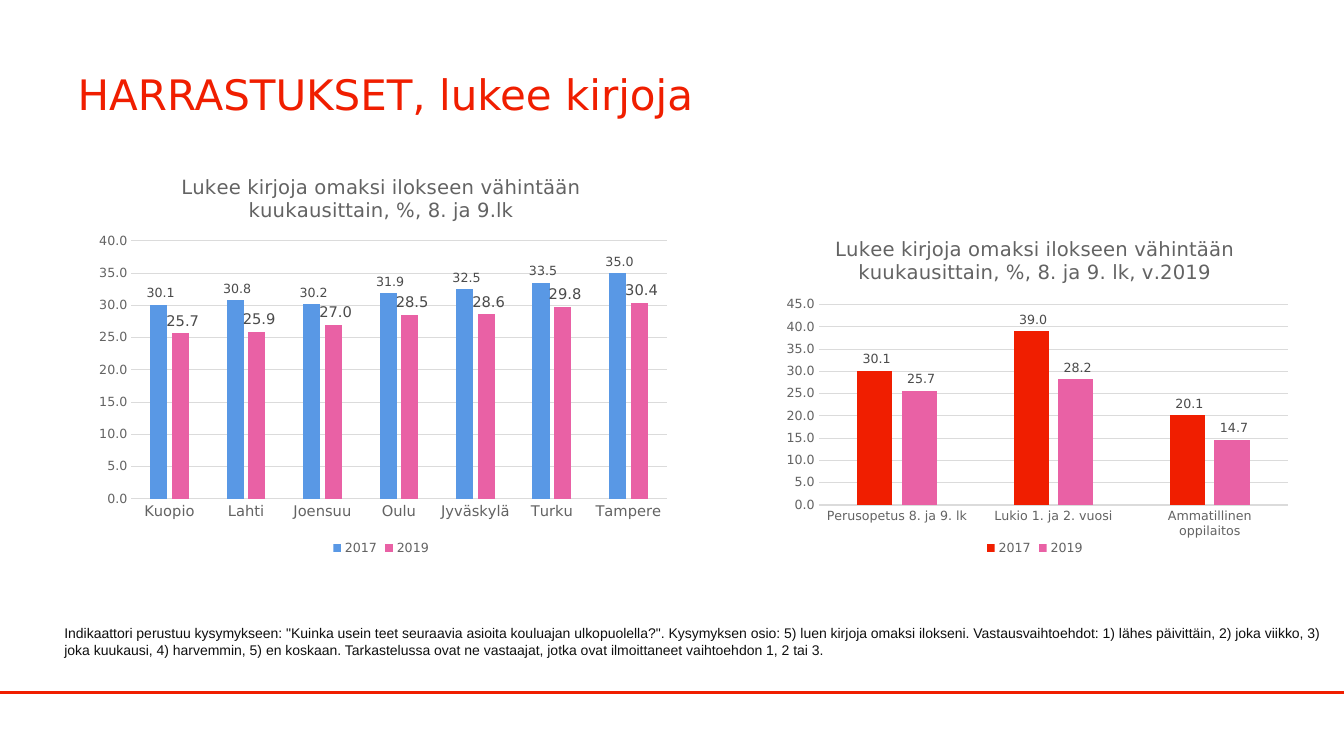
from lxml import etree
from pptx import Presentation
from pptx import util as u
from pptx.chart.data import CategoryChartData
from pptx.dml.color import RGBColor
from pptx.enum import chart as ch, shapes, text
from pptx.oxml.ns import qn

W, H = 13.33, 7.5
SANS = "DejaVu Sans"
NUMBER = r"#\ ##0.0"
COLORS = {"red": "F01E00", "blue": "5998E5", "pink": "E961A5", "ink": "0F0F0F",
          "grey": "636363", "label": "4B4B4B", "grid": "DBDBDB"}


def rgb(name):
    """Return the named colour."""
    return RGBColor.from_string(COLORS[name])


def box(x, y, w, h):
    """Turn percentages of the slide into left, top, width and height."""
    return [u.Inches(share * side / 100) for share, side in zip((x, y, w, h), (W, H, W, H))]


def style(font, size, color, name=SANS):
    """Set size, colour and typeface of a font."""
    font.size, font.name, font.bold = u.Pt(size), name, False
    font.color.rgb = rgb(color)


def add_title(s, words, place):
    """Fill and place the title placeholder."""
    sp = s.shapes.title
    sp.left, sp.top, sp.width, sp.height = box(*place)
    tf = sp.text_frame
    tf.text = words
    tf.vertical_anchor = text.MSO_ANCHOR.MIDDLE
    p = tf.paragraphs[0]
    p.alignment = text.PP_ALIGN.LEFT
    style(p.font, 30, "red")


def add_note(s, words, place):
    """Add the wrapped explanatory note."""
    tf = s.shapes.add_textbox(*box(*place)).text_frame
    tf.word_wrap = True
    tf.auto_size = text.MSO_AUTO_SIZE.SHAPE_TO_FIT_TEXT
    p = tf.paragraphs[0]
    p.text = words
    style(p.font, 10, "ink", "Arial")


def add_rule(s, y):
    """Draw a red line across the slide."""
    left, top, width, _ = box(0, y, 100, 0)
    line = s.shapes.add_connector(shapes.MSO_CONNECTOR.STRAIGHT, left, top, left + width, top)
    line.line.color.rgb = rgb("red")
    line.line.width = u.Pt(2)
    etree.SubElement(line.element.spPr, qn("a:effectLst"))


def set_plot_area(chart, shares):
    """Fix the inner plot area as shares of the chart."""
    area = chart.element.find(".//" + qn("c:plotArea"))
    for old in area.findall(qn("c:layout")):
        area.remove(old)
    layout = etree.Element(qn("c:layout"))
    manual = etree.SubElement(layout, qn("c:manualLayout"))
    settings = [("layoutTarget", "inner"), ("xMode", "edge"), ("yMode", "edge")]
    for tag, value in settings + list(zip("xywh", shares)):
        etree.SubElement(manual, qn("c:" + tag)).set("val", str(value))
    area.insert(0, layout)


def format_axes(chart, cat_size, top):
    """Style both axes and the gridlines."""
    for axis, size in ((chart.category_axis, cat_size), (chart.value_axis, 9)):
        axis.major_tick_mark = axis.minor_tick_mark = ch.XL_TICK_MARK.NONE
        style(axis.tick_labels.font, size, "grey")
    cats, vals = chart.category_axis, chart.value_axis
    vals.minimum_scale, vals.maximum_scale, vals.major_unit = 0, top, 5
    vals.has_major_gridlines = True
    for line in (cats.format.line, vals.major_gridlines.format.line):
        line.color.rgb = rgb("grid")
        line.width = u.Pt(0.75)
    vals.format.line.fill.background()
    vals.tick_labels.number_format = NUMBER
    vals.tick_labels.number_format_is_linked = False


def format_series(series, color, size):
    """Colour a series and label its columns."""
    series.format.fill.solid()
    series.format.fill.fore_color.rgb = rgb(color)
    labels = series.data_labels
    labels.show_value = True
    labels.position = ch.XL_LABEL_POSITION.OUTSIDE_END
    labels.number_format = NUMBER
    labels.number_format_is_linked = False
    style(labels.font, size, "label")


def add_columns(s, place, title, cats, series, cat_size, top, plot_area):
    """Add a clustered column chart; series hold name, values, colour, label size."""
    data = CategoryChartData(number_format=NUMBER)
    data.categories = cats
    for name, values, _, _ in series:
        data.add_series(name, values)
    chart = s.shapes.add_chart(ch.XL_CHART_TYPE.COLUMN_CLUSTERED, *box(*place), data).chart
    style(chart.font, 10, "ink")
    chart.has_title = True
    p = chart.chart_title.text_frame.paragraphs[0]
    p.text = title
    style(p.font, 14, "grey")
    chart.chart_title.include_in_layout = False
    chart.has_legend = True
    chart.legend.position = ch.XL_LEGEND_POSITION.BOTTOM
    chart.legend.include_in_layout = False
    style(chart.legend.font, 9, "grey")
    plot = chart.plots[0]
    plot.gap_width, plot.overlap, plot.vary_by_categories = 219, -27, False
    for drawn, (_, _, color, size) in zip(plot.series, series):
        format_series(drawn, color, size)
    format_axes(chart, cat_size, top)
    set_plot_area(chart, plot_area)


def main():
    """Build the slide on reading as a hobby."""
    prs = Presentation()
    prs.slide_width, prs.slide_height = u.Inches(W), u.Inches(H)
    s = prs.slides.add_slide(prs.slide_layouts[5])
    add_rule(s, 91.6)
    add_title(s, "HARRASTUKSET, lukee kirjoja", (5.03, 4, 90, 16.67))
    add_columns(
        s, (6.23, 20.67, 44.26, 53.33),
        "Lukee kirjoja omaksi ilokseen vähintään kuukausittain, %, 8. ja 9.lk",
        ["Kuopio", "Lahti", "Joensuu", "Oulu", "Jyväskylä", "Turku", "Tampere"],
        [("2017", (30.1, 30.8, 30.2, 31.9, 32.5, 33.5, 35.0), "blue", 9),
         ("2019", (25.7, 25.9, 27.0, 28.5, 28.6, 29.8, 30.4), "pink", 10.5)],
        10.5, 40, (0.08, 0.21, 0.9, 0.64))
    add_note(
        s, 'Indikaattori perustuu kysymykseen: "Kuinka usein teet seuraavia asioita kouluajan '
        'ulkopuolella?". Kysymyksen osio: 5) luen kirjoja omaksi ilokseni. Vastausvaihtoehdot: '
        "1) lähes päivittäin, 2) joka viikko, 3) joka kuukausi, 4) harvemmin, 5) en koskaan. "
        "Tarkastelussa ovat ne vastaajat, jotka ovat ilmoittaneet vaihtoehdon 1, 2 tai 3.",
        (4.05, 82, 95.2, 5.87))
    add_columns(
        s, (57.39, 29.07, 39.23, 44.93),
        "Lukee kirjoja omaksi ilokseen vähintään kuukausittain, %, 8. ja 9. lk, v.2019",
        ["Perusopetus 8. ja 9. lk", "Lukio 1. ja 2. vuosi", "Ammatillinen oppilaitos"],
        [("2017", (30.1, 39.0, 20.1), "red", 9),
         ("2019", (25.7, 28.2, 14.7), "pink", 9)],
        9, 45, (0.09, 0.25, 0.89, 0.59))
    prs.save("out.pptx")


if __name__ == "__main__":
    main()
